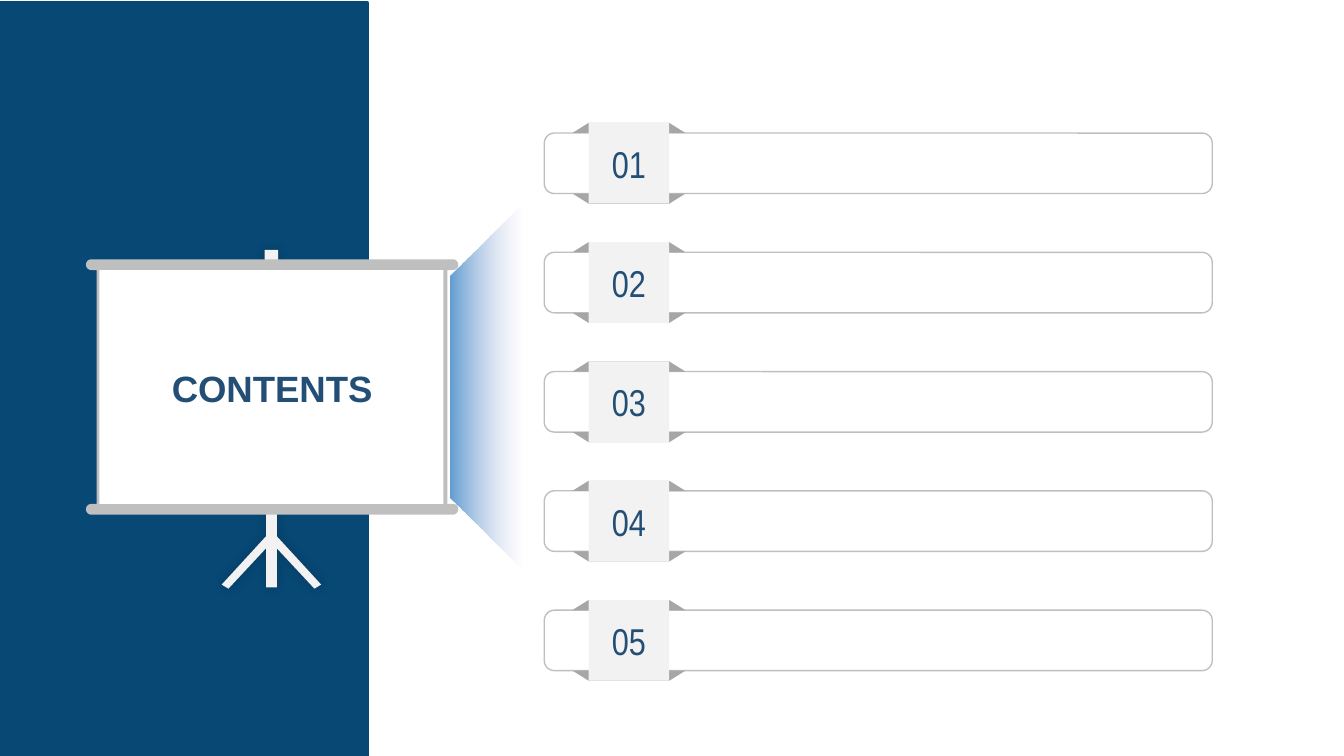
import math
from dataclasses import dataclass

from lxml import etree
from pptx import Presentation
from pptx.dml.color import RGBColor
from pptx.enum.shapes import MSO_SHAPE
from pptx.enum.text import MSO_ANCHOR, MSO_AUTO_SIZE, PP_ALIGN
from pptx.oxml.ns import qn
from pptx.util import Inches, Pt

RECT = MSO_SHAPE.RECTANGLE
ROUNDED = MSO_SHAPE.ROUNDED_RECTANGLE
TRAPEZOID = MSO_SHAPE.TRAPEZOID
CENTER = PP_ALIGN.CENTER
MIDDLE = MSO_ANCHOR.MIDDLE


@dataclass(frozen=True)
class Theme:
    panel: str = "074875"
    text: str = "234F77"
    pale: str = "F2F2F2"
    flap: str = "A6A6A6"
    frame: str = "BFBFBF"
    white: str = "FFFFFF"
    beam_near: str = "629DD1"
    beam_far: str = "CBCEE8"
    title_font: str = "Arial"
    number_font: str = "Arial Narrow"
    title_size: float = 19.6
    number_size: float = 20


THEME = Theme()
WIDTH, HEIGHT = 10, 10 * 9 / 16

# Rows of the contents list
ROWS = 5
FIRST_ROW, LAST_ROW = 0.99, 4.54
PITCH = (LAST_ROW - FIRST_ROW) / (ROWS - 1)
BAR_LEFT, BAR_WIDTH, BAR_HEIGHT = 4.05, 4.97, 0.45
BADGE_LEFT, BADGE_SIZE = 4.38, 0.6
FLAP_HEIGHT = (BADGE_SIZE - BAR_HEIGHT) / 2
FLAP_SIDE = 0.12

# Presentation board
AXIS = 2.02
RAIL_LEFT, RAIL_RIGHT, RAIL_RADIUS = 0.68, 3.37, 0.04
RAIL_TOP, RAIL_BOTTOM = 1.97, 3.79
POST_LEFT, POST_RIGHT = 0.72, 3.33


def paint(shape, fill=None, line=None, line_width=0.75):
    shape.shadow.inherit = False
    if fill:
        shape.fill.solid()
        shape.fill.fore_color.rgb = RGBColor.from_string(fill)
    else:
        shape.fill.background()
    if line:
        shape.line.color.rgb = RGBColor.from_string(line)
        shape.line.width = Pt(line_width)
    else:
        shape.line.fill.background()


def add_box(s, kind, box, **style):
    shape = s.shapes.add_shape(kind, *(Inches(v) for v in box))
    paint(shape, **style)
    return shape


def add_outline(s, contours, fill):
    """Draw closed contours, given as points in inches, as one shape."""
    contours = [[(Inches(x), Inches(y)) for x, y in c] for c in contours]
    builder = s.shapes.build_freeform(*contours[0][0], scale=1.0)
    for i, points in enumerate(contours):
        if i:
            builder.move_to(*points[0])
        builder.add_line_segments(points[1:], close=True)
    shape = builder.convert_to_shape()
    paint(shape, fill)
    return shape


def set_text(shape, text, font, size, bold=False):
    tf = shape.text_frame
    tf.text = text
    tf.word_wrap = True
    tf.auto_size = MSO_AUTO_SIZE.NONE
    tf.vertical_anchor = MIDDLE
    tf.margin_left = tf.margin_right = tf.margin_top = tf.margin_bottom = 0
    p = tf.paragraphs[0]
    p.alignment = CENTER
    r = p.runs[0]
    r.font.name, r.font.size, r.font.bold = font, Pt(size), bold
    r.font.color.rgb = RGBColor.from_string(THEME.text)


def add_alpha(color, percent):
    etree.SubElement(color, qn("a:alpha"), val=str(percent * 1000))


def add_soft_shadow(shape, blur, percent):
    effects = shape.element.spPr.find(qn("a:effectLst"))
    shadow = etree.SubElement(effects, qn("a:outerShdw"),
                              blurRad=str(Pt(blur)), dist="0",
                              dir="13500000", rotWithShape="0")
    color = etree.SubElement(shadow, qn("a:srgbClr"), val="000000")
    add_alpha(color, percent)


def rail_end(cx, cy, start):
    """Half circle of a rail, clockwise from the start angle."""
    return [(cx + RAIL_RADIUS * math.cos(math.radians(a)),
             cy + RAIL_RADIUS * math.sin(math.radians(a)))
            for a in range(start, start + 181, 15)]


def add_row(s, index):
    top = FIRST_ROW + index * PITCH
    add_box(s, ROUNDED, (BAR_LEFT, top, BAR_WIDTH, BAR_HEIGHT), line=THEME.frame)
    # Folded ribbon ends above and below the bar
    for y, turn in ((top + BAR_HEIGHT, 180), (top - FLAP_HEIGHT, 0)):
        flap = add_box(s, TRAPEZOID,
                       (BADGE_LEFT - FLAP_SIDE, y,
                        BADGE_SIZE + 2 * FLAP_SIDE, FLAP_HEIGHT),
                       fill=THEME.flap)
        flap.adjustments[0] = FLAP_SIDE / FLAP_HEIGHT
        flap.rotation = turn
    badge = add_box(s, RECT, (BADGE_LEFT, top - FLAP_HEIGHT, BADGE_SIZE, BADGE_SIZE),
                    fill=THEME.pale)
    set_text(badge, f"{index + 1:02d}", THEME.number_font, THEME.number_size)


def add_stand(s):
    knob = [(-0.05, 1.86), (0.05, 1.86), (0.05, 2), (-0.05, 2)]
    # Right half of the tripod, mirrored about the axis
    half = [(0.04, 3.62), (0.04, 3.99), (0.37, 4.35), (0.32, 4.38),
            (0.04, 4.08), (0.04, 4.37)]
    tripod = half + [(-x, y) for x, y in reversed(half)]
    stand = add_outline(s, [[(AXIS + x, y) for x, y in c] for c in (knob, tripod)],
                        THEME.pale)
    add_soft_shadow(stand, blur=6, percent=20)


def add_board(s):
    frame = [(POST_LEFT, RAIL_BOTTOM - RAIL_RADIUS), (POST_LEFT, RAIL_TOP + RAIL_RADIUS),
             *rail_end(RAIL_LEFT, RAIL_TOP, 90),
             *rail_end(RAIL_RIGHT, RAIL_TOP, 270),
             (POST_RIGHT, RAIL_TOP + RAIL_RADIUS), (POST_RIGHT, RAIL_BOTTOM - RAIL_RADIUS),
             *rail_end(RAIL_RIGHT, RAIL_BOTTOM, 270),
             *rail_end(RAIL_LEFT, RAIL_BOTTOM, 90)]
    add_outline(s, [frame], THEME.frame)
    add_box(s, RECT, (0.74, 2.01, 2.56, 1.74), fill=THEME.white)


def add_beam(s):
    beam = add_box(s, TRAPEZOID, (2.26, 2.61, 2.72, 0.53))
    beam.adjustments[0] = 1.01
    beam.rotation = 270
    beam.fill.gradient()
    beam.fill.gradient_angle = 270
    for stop, color in zip(beam.fill.gradient_stops, (THEME.beam_near, THEME.beam_far)):
        stop.color.rgb = RGBColor.from_string(color)
    # Fade the far end out completely
    add_alpha(list(beam.element.spPr.iter(qn("a:srgbClr")))[-1], 0)


def place_title(s, text):
    title = s.shapes.title
    title.left, title.top, title.width, title.height = (
        Inches(v) for v in (1.14, 2.67, 1.77, 0.43))
    set_text(title, text, THEME.title_font, THEME.title_size, bold=True)
    # Bring the title in front of the board
    title.element.getparent().append(title.element)


def main():
    prs = Presentation()
    prs.slide_width, prs.slide_height = Inches(WIDTH), Inches(HEIGHT)
    s = prs.slides.add_slide(prs.slide_layouts[5])

    add_box(s, RECT, (0, 0.02, 2.73, HEIGHT - 0.02),
            fill=THEME.panel, line=THEME.panel, line_width=2)
    add_stand(s)
    add_board(s)
    add_beam(s)
    place_title(s, "CONTENTS")
    for index in range(ROWS):
        add_row(s, index)

    prs.save("out.pptx")


if __name__ == "__main__":
    main()
